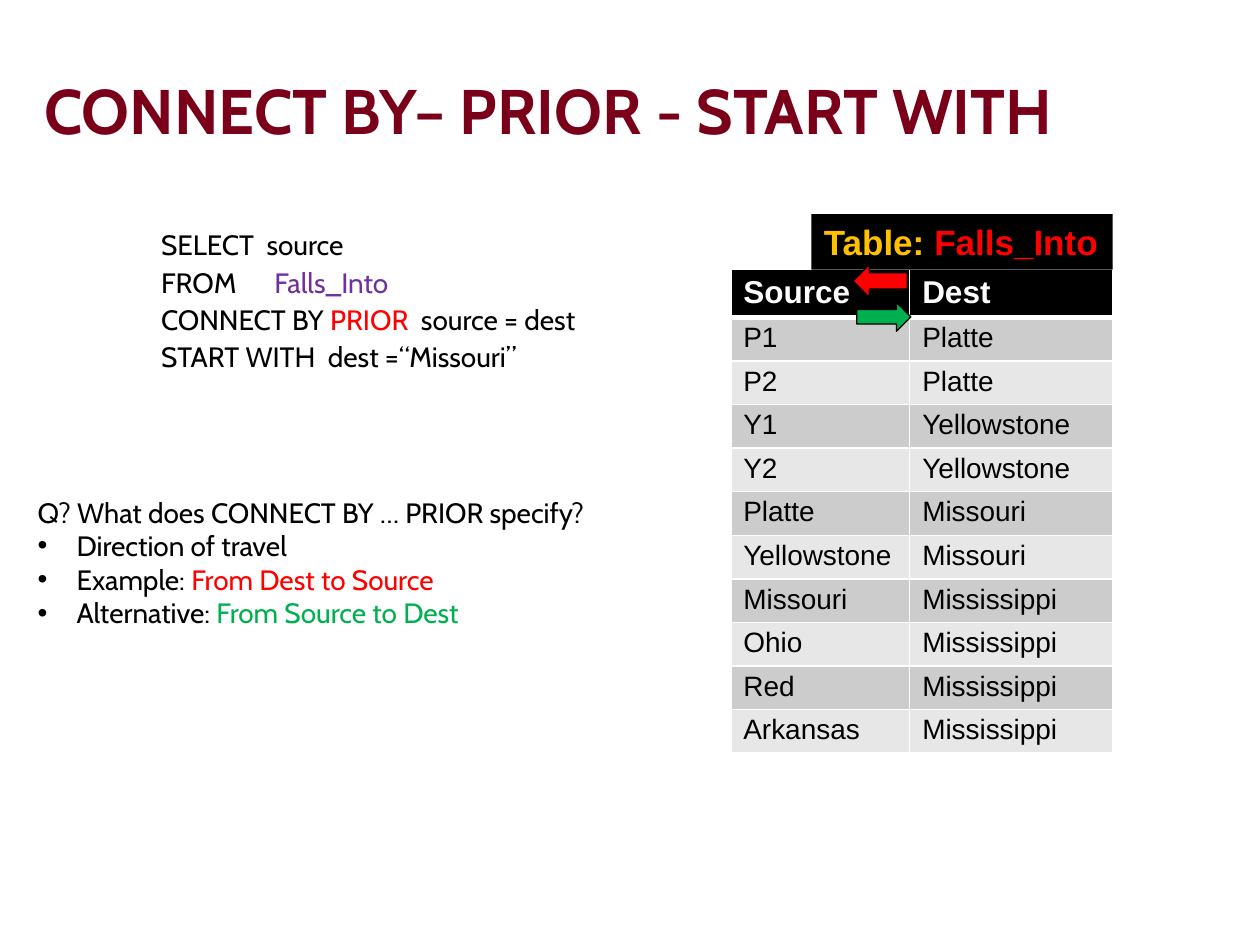
from pptx import Presentation
from pptx.dml.color import RGBColor
from pptx.enum.shapes import MSO_SHAPE
from pptx.enum.text import MSO_ANCHOR, MSO_AUTO_SIZE, PP_ALIGN
from pptx.oxml.ns import qn
from pptx.util import Inches, Pt
from lxml import etree

RECT = MSO_SHAPE.RECTANGLE
LEFT_ARROW = MSO_SHAPE.LEFT_ARROW
RIGHT_ARROW = MSO_SHAPE.RIGHT_ARROW
MIDDLE = MSO_ANCHOR.MIDDLE
FIT = MSO_AUTO_SIZE.SHAPE_TO_FIT_TEXT
LEFT = PP_ALIGN.LEFT

BLACK = "000000"
WHITE = "FFFFFF"
RED = "FF0000"
GREEN = "00B050"
PURPLE = "7030A0"
GOLD = "FFC000"
MAROON = "7A0019"
BANDS = ("CCCCCC", "E7E7E7")

QUERY = [
    [("SELECT  source", BLACK)],
    [("FROM\t", BLACK), ("Falls_Into", PURPLE)],
    [("CONNECT BY ", BLACK), ("PRIOR", RED), ("  source = dest", BLACK)],
    [("START WITH  dest =“Missouri”", BLACK)],
]
NOTES = [
    [("Q? What does CONNECT BY … PRIOR specify?", BLACK)],
    [("Direction of travel", BLACK)],
    [("Example: ", BLACK), ("From Dest to Source", RED)],
    [("Alternative: ", BLACK), ("From Source to Dest", GREEN)],
]
RIVERS = [
    ("Source", "Dest"),
    ("P1", "Platte"),
    ("P2", "Platte"),
    ("Y1", "Yellowstone"),
    ("Y2", "Yellowstone"),
    ("Platte", "Missouri"),
    ("Yellowstone", "Missouri"),
    ("Missouri", "Mississippi"),
    ("Ohio", "Mississippi"),
    ("Red", "Mississippi"),
    ("Arkansas", "Mississippi"),
]


def color(text):
    return RGBColor.from_string(text)


class Deck:
    head = "Cabin"
    body = "Arial"

    def __init__(self, slide):
        self.slide = slide

    def style(self, run, font, size, tint, bold=False):
        run.font.name = font
        run.font.size = Pt(size)
        run.font.bold = bold
        run.font.color.rgb = color(tint)

    def fill(self, para, parts, font, size, bold=False):
        for text, tint in parts:
            run = para.add_run()
            run.text = text
            self.style(run, font, size, tint, bold)

    def title(self, text, box):
        shape = self.slide.shapes.title
        shape.left, shape.top, shape.width, shape.height = map(Inches, box)
        frame = shape.text_frame
        frame.text = text
        frame.vertical_anchor = MIDDLE
        para = frame.paragraphs[0]
        para.alignment = LEFT
        self.style(para.runs[0], self.head, 36, MAROON, True)

    def text(self, lines, box):
        frame = self.slide.shapes.add_textbox(*map(Inches, box)).text_frame
        frame.word_wrap = True
        frame.auto_size = FIT
        for i, parts in enumerate(lines):
            para = frame.paragraphs[0] if i == 0 else frame.add_paragraph()
            self.fill(para, parts, self.head, 16)
        return frame.paragraphs

    def tab(self, para, stop):
        tabs = etree.SubElement(para._p.get_or_add_pPr(), qn("a:tabLst"))
        etree.SubElement(tabs, qn("a:tab"), pos=str(Inches(stop)), algn="l")

    def bullet(self, para, gap):
        props = para._p.get_or_add_pPr()
        props.set("marL", str(Inches(gap)))
        props.set("indent", str(-Inches(gap)))
        etree.SubElement(props, qn("a:buFont"), typeface=self.body)
        etree.SubElement(props, qn("a:buChar"), char="•")

    def shape(self, kind, box, tint, line=None):
        shape = self.slide.shapes.add_shape(kind, *map(Inches, box))
        shape.shadow.inherit = False
        shape.fill.solid()
        shape.fill.fore_color.rgb = color(tint)
        if line:
            shape.line.color.rgb = color(line)
            shape.line.width = Pt(0.75)
        else:
            shape.line.fill.background()
        return shape

    def label(self, parts, box):
        frame = self.shape(RECT, box, BLACK).text_frame
        frame.word_wrap = False
        frame.auto_size = FIT
        frame.paragraphs[0].alignment = LEFT
        self.fill(frame.paragraphs[0], parts, self.body, 20, True)

    def border(self, cell, row):
        props = cell._tc.get_or_add_tcPr()
        thick = {0: "lnB", 1: "lnT"}.get(row)
        for side in ("lnL", "lnR", "lnT", "lnB"):
            width = Pt(3 if side == thick else 1)
            line = etree.SubElement(props, qn("a:" + side), w=str(width))
            paint = etree.SubElement(line, qn("a:solidFill"))
            etree.SubElement(paint, qn("a:srgbClr"), val=WHITE)

    def cell(self, cell, text, row):
        cell.margin_left = cell.margin_right = Inches(0.1)
        cell.margin_top = cell.margin_bottom = Inches(0.04)
        self.border(cell, row)
        cell.fill.solid()
        cell.fill.fore_color.rgb = color(BANDS[(row - 1) % 2] if row else BLACK)
        size, tint = (16, BLACK) if row else (18, WHITE)
        self.fill(cell.text_frame.paragraphs[0], [(text, tint)],
                  self.body, size, row == 0)

    def table(self, data, box, cols, top):
        shape = self.slide.shapes.add_table(
            len(data), len(cols), *map(Inches, box))
        table = shape.table
        for col, width in zip(table.columns, cols):
            col.width = Inches(width)
        step = (box[3] - top) / (len(data) - 1)
        for i, words in enumerate(data):
            table.rows[i].height = Inches(step if i else top)
            for j, text in enumerate(words):
                self.cell(table.cell(i, j), text, i)


def main():
    show = Presentation()
    show.slide_width = Inches(10)
    show.slide_height = Inches(7.5)
    deck = Deck(show.slides.add_slide(show.slide_layouts[5]))

    deck.title("CONNECT BY– PRIOR - START WITH", (0.25, 0.33, 9.42, 1.08))
    deck.table(RIVERS, (5.8, 2.14, 3.03, 3.84), (1.42, 1.61), 0.38)
    deck.label([("Table: ", GOLD), ("Falls_Into", RED)],
               (6.44, 1.7, 2.39, 0.44))

    query = deck.text(QUERY, (1.18, 1.81, 4.28, 1.22))
    for i, para in enumerate(query):
        para.line_spacing = 0.8
        para.space_before = Pt(6 if i else 0)
    deck.tab(query[1], 0.9)

    notes = deck.text(NOTES, (0.2, 3.88, 5.77, 1.21))
    for para in notes[1:]:
        deck.bullet(para, 0.31)

    deck.shape(LEFT_ARROW, (6.77, 2.1, 0.43, 0.26), RED, BLACK)
    deck.shape(RIGHT_ARROW, (6.8, 2.4, 0.43, 0.23), GREEN, BLACK)
    show.save("out.pptx")


if __name__ == "__main__":
    main()
